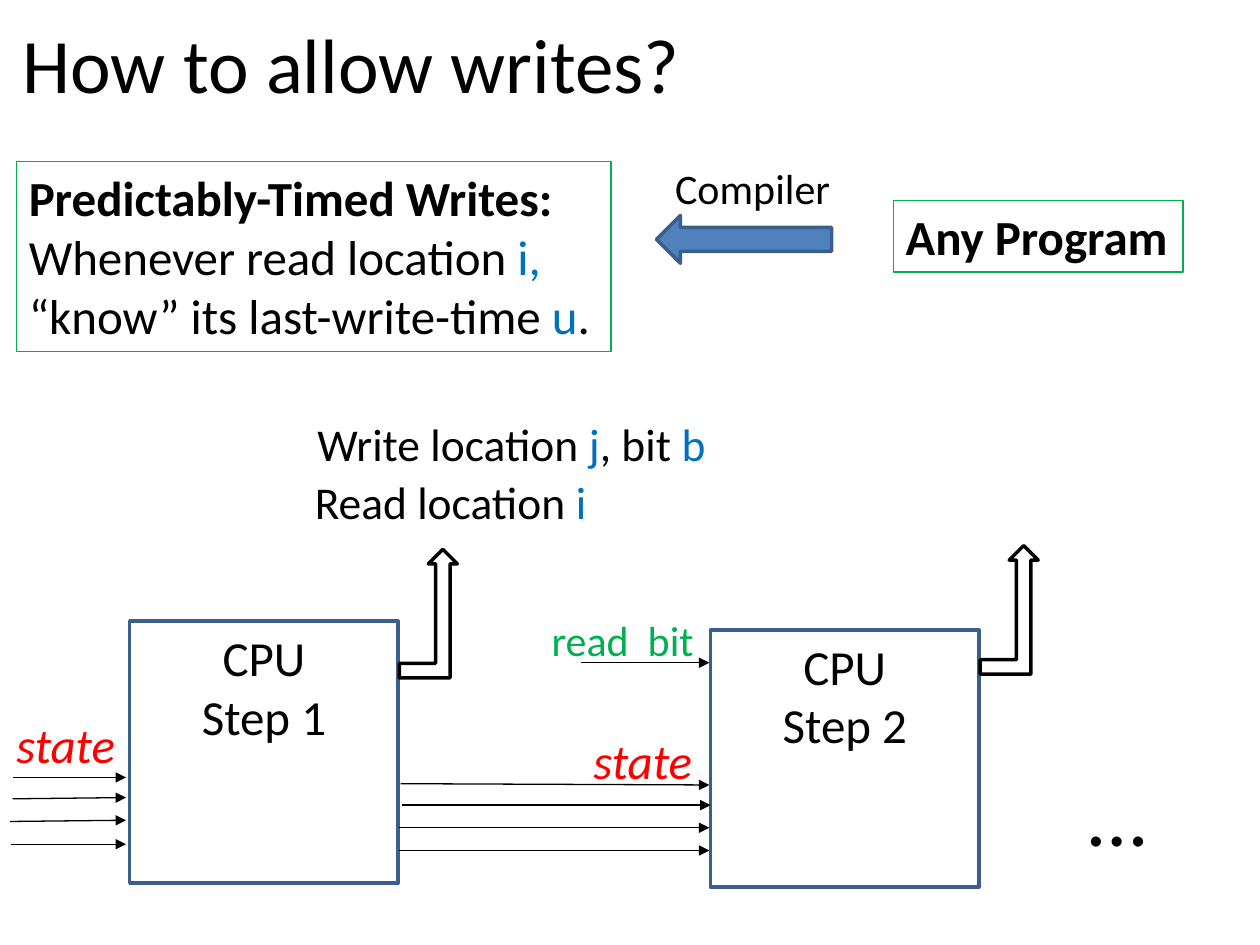
from lxml import etree
from pptx import Presentation
from pptx import util as u
from pptx.dml.color import RGBColor
from pptx.enum import shapes, text
from pptx.oxml.ns import qn

PX = 9144
BLACK, WHITE, BLUE, GREEN, RED = "000000", "FFFFFF", "0070C0", "00B050", "FF0000"
STEEL, NAVY = "4F81BD", "3A5F8C"


def px(*lengths):
    return [u.Emu(n * PX) for n in lengths]


def color(hex_string):
    return RGBColor.from_string(hex_string)


def outline(sp, hex_string, width):
    sp.line.color.rgb = color(hex_string)
    sp.line.width = u.Pt(width)


def write(tf, lines, size, align=text.PP_ALIGN.LEFT):
    for i, runs in enumerate(lines):
        p = tf.paragraphs[0] if i == 0 else tf.add_paragraph()
        p.alignment = align
        for content, hex_string, *styles in runs:
            r = p.add_run()
            r.text = content
            r.font.name = "Calibri"
            r.font.size = u.Pt(size)
            r.font.color.rgb = color(hex_string)
            r.font.bold = "bold" in styles
            r.font.italic = "italic" in styles


def label(s, box, lines, size, wrap=False, inset=True, border=None):
    sp = s.shapes.add_textbox(*px(*box))
    tf = sp.text_frame
    tf.word_wrap = wrap
    tf.auto_size = text.MSO_AUTO_SIZE.SHAPE_TO_FIT_TEXT
    if not inset:
        tf.margin_left = tf.margin_top = tf.margin_right = tf.margin_bottom = 0
    if border:
        outline(sp, border, 0.75)
    write(tf, lines, size)


def block(s, kind, box, fill, line):
    sp = s.shapes.add_shape(kind, *px(*box))
    sp.shadow.inherit = False
    sp.fill.solid()
    sp.fill.fore_color.rgb = color(fill)
    outline(sp, line, 2)
    return sp


def wire(s, x1, y1, x2, y2):
    c = s.shapes.add_connector(shapes.MSO_CONNECTOR.STRAIGHT, *px(x1, y1, x2, y2))
    outline(c, BLACK, 0.75)
    etree.SubElement(c.line._get_or_add_ln(), qn("a:tailEnd"), type="triangle")
    etree.SubElement(c._element.spPr, qn("a:effectLst"))


def title(s, box):
    sp = s.shapes.add_textbox(*px(*box))
    sp.text_frame.word_wrap = True
    write(sp.text_frame, [[("How to allow writes?", BLACK)]], 44)


def compilation(s, box):
    x, y, w, h = box
    label(s, (x, y + 4, 472, 151), [
        [("Predictably-Timed Writes:", BLACK, "bold")],
        [("Whenever read location ", BLACK), ("i,", BLUE)],
        [("“know” its last-write-time ", BLACK), ("u", BLUE), (".", BLACK)],
    ], 28, border=GREEN)
    label(s, (x + w - 230, y + 35, 230, 57),
          [[("Any Program", BLACK, "bold")]], 28, border=GREEN)
    block(s, shapes.MSO_SHAPE.LEFT_ARROW, (x + 508, y + 47, 139, 38), STEEL, NAVY)
    label(s, (x + 513, y, 144, 50), [[("Compiler", BLACK)]], 24)


def cpu_step(s, box, number, rise):
    x, y, w, h = box
    sp = block(s, shapes.MSO_SHAPE.RECTANGLE, box, WHITE, NAVY)
    sp.text_frame.vertical_anchor = text.MSO_ANCHOR.TOP
    write(sp.text_frame, [[("CPU", BLACK)], [(f"Step {number}", BLACK)]],
          28, text.PP_ALIGN.CENTER)
    block(s, shapes.MSO_SHAPE.BENT_UP_ARROW, (x + w + 1, y - rise, 46, 102), WHITE, BLACK)


def state_bus(s, box, starts, ends, label_at):
    x, y, w, h = box
    for (x1, y1), (x2, y2) in zip(starts, ends):
        wire(s, x + x1, y + y1, x + w + x2, y + y2)
    label(s, (x + label_at[0], y + label_at[1], 79, 47),
          [[("state", RED, "italic")]], 28, inset=False)


def memory_access(s, box):
    x, y, w, h = box
    label(s, (x + 2, y, w - 2, 54), [[
        ("Write location", BLACK), (" j", BLUE), (", bit ", BLACK), ("b", BLUE)]],
        26, wrap=True)
    label(s, (x, y + 46, 251, 54), [[("Read location ", BLACK), ("i", BLUE)]],
          26, wrap=True)


def read_bit(s, box):
    x, y, w, h = box
    label(s, (x, y, 134, 50), [[("read  bit", GREEN)]], 24)
    wire(s, x + 33, y + h, x + w, y + h)


def main():
    prs = Presentation()
    prs.slide_width, prs.slide_height = px(1000, 750)
    s = prs.slides.add_slide(prs.slide_layouts[6])
    title(s, (8, 8, 983, 733))
    cpu_step(s, (103, 493, 213, 208), 1, 57)
    cpu_step(s, (564, 500, 213, 204), 2, 67)
    state_bus(s, (8, 617, 92, 53),
              [(2, 0), (2, 17), (0, 35), (1, 53)],
              [(0, 0), (0, 16), (0, 34), (0, 53)], (5, -50))
    state_bus(s, (317, 622, 246, 53),
              [(1, 0), (2, 17), (0, 35), (0, 53)],
              [(0, 1), (1, 17), (0, 35), (0, 53)], (154, -42))
    memory_access(s, (240, 325, 352, 100))
    read_bit(s, (428, 483, 135, 43))
    label(s, (854, 600, 67, 91), [[("…", BLACK)]], 48)
    compilation(s, (13, 124, 926, 155))
    prs.save("out.pptx")


if __name__ == "__main__":
    main()
